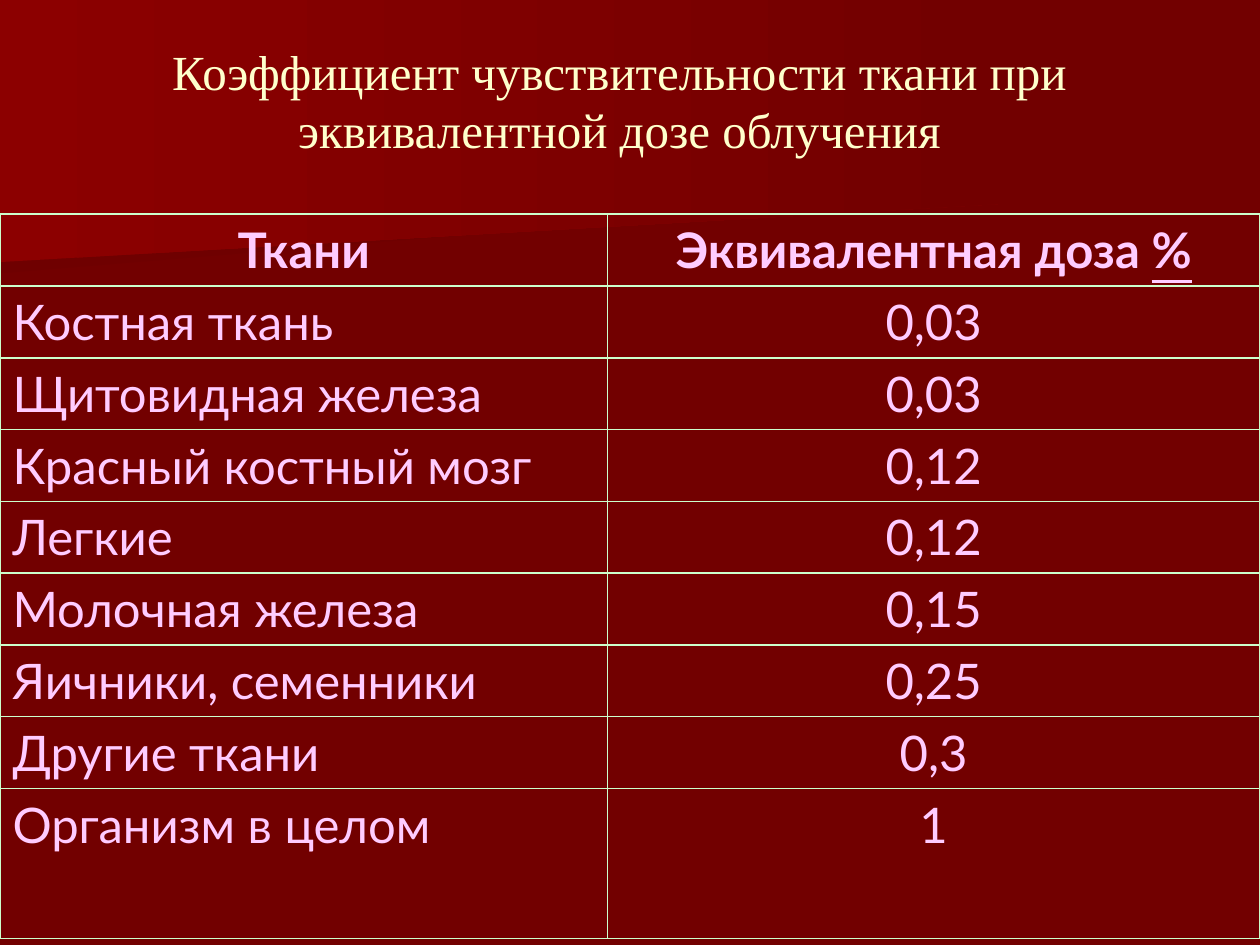
"""Build a slide with a table of tissue sensitivity coefficients."""
import dataclasses

import lxml.etree
import pptx
import pptx.dml.color
import pptx.enum.text
import pptx.oxml.ns
import pptx.util

Inches = pptx.util.Inches
CENTER = pptx.enum.text.PP_ALIGN.CENTER
LEFT = pptx.enum.text.PP_ALIGN.LEFT

COLORS = {
    "background": "720000",
    "shade": "6F0000",
    "glow": "8C0000",
    "title": "FFFFCC",
    "table_text": "FFCCFF",
    "border": "CCFFCC",
}


@dataclasses.dataclass(frozen=True)
class Wedge:
    """A background outline that fades into the slide colour."""

    points: tuple[tuple[float, float], ...]
    color: str


@dataclasses.dataclass(frozen=True)
class TissueRow:
    """One table row with its tissue and dose."""

    tissue: str
    dose: str
    height: float = 0.57


WEDGES = (
    Wedge(((7.78, 1.53), (0, 2.17), (0, 1.01), (7.79, 1.01), (7.78, 1.28)), "shade"),
    Wedge(((7.92, 1.62), (0, 2.08), (0, 0), (7.92, 0)), "glow"),
)
ROWS = (
    TissueRow("Ткани", "Эквивалентная доза "),
    TissueRow("Костная ткань", "0,03"),
    TissueRow("Щитовидная железа", "0,03"),
    TissueRow("Красный костный мозг", "0,12"),
    TissueRow("Легкие", "0,12"),
    TissueRow("Молочная железа", "0,15"),
    TissueRow("Яичники, семенники", "0,25"),
    TissueRow("Другие ткани", "0,3"),
    TissueRow("Организм в целом", "1", 1.19),
)
COLUMN_WIDTHS = (4.82, 5.18)
TITLE = "Коэффициент чувствительности ткани при эквивалентной дозе облучения"


def rgb(name: str) -> pptx.dml.color.RGBColor:
    """Return a named colour."""
    return pptx.dml.color.RGBColor.from_string(COLORS[name])


def add_run(paragraph, text: str, color: str, **formats) -> None:
    """Add a run with the given font attributes."""
    run = paragraph.add_run()
    run.text = text
    run.font.color.rgb = rgb(color)
    for attribute, value in {"size": pptx.util.Pt(28), **formats}.items():
        setattr(run.font, attribute, value)


def draw_wedge(slide, wedge: Wedge) -> None:
    """Draw a gradient background outline."""
    start, *others = [(Inches(x), Inches(y)) for x, y in wedge.points]
    builder = slide.shapes.build_freeform(*start)
    builder.add_line_segments(others)
    shape = builder.convert_to_shape()
    shape.shadow.inherit = False
    shape.line.fill.background()
    shape.fill.gradient()
    shape.fill.gradient_angle = 0
    for stop, color in zip(shape.fill.gradient_stops, (wedge.color, "background")):
        stop.color.rgb = rgb(color)


def set_borders(cell) -> None:
    """Give all four sides of a cell a thin line."""
    qn = pptx.oxml.ns.qn
    properties = cell._tc.get_or_add_tcPr()
    for index, side in enumerate(("lnL", "lnR", "lnT", "lnB")):
        line = lxml.etree.Element(qn(f"a:{side}"), w=str(pptx.util.Pt(1)))
        fill = lxml.etree.SubElement(line, qn("a:solidFill"))
        lxml.etree.SubElement(fill, qn("a:srgbClr"), val=COLORS["border"])
        properties.insert(index, line)


def draw_table(slide) -> None:
    """Draw the table of tissues and doses."""
    height = sum(row.height for row in ROWS)
    table = slide.shapes.add_table(
        len(ROWS), len(COLUMN_WIDTHS), 0, Inches(1.7), Inches(10), Inches(height)
    ).table
    table.first_row = table.horz_banding = False
    for column, width in zip(table.columns, COLUMN_WIDTHS):
        column.width = Inches(width)
    for row_index, row in enumerate(ROWS):
        table.rows[row_index].height = Inches(row.height)
        is_header = row_index == 0
        for column_index, text in enumerate((row.tissue, row.dose)):
            cell = table.cell(row_index, column_index)
            cell.fill.background()
            set_borders(cell)
            paragraph = cell.text_frame.paragraphs[0]
            paragraph.alignment = CENTER if is_header or column_index else LEFT
            add_run(paragraph, text, "table_text", name="Lato", bold=is_header)
    header = table.cell(0, 1).text_frame.paragraphs[0]
    add_run(header, "%", "table_text", name="Lato", bold=True, underline=True)


def draw_title(slide) -> None:
    """Draw the centred title."""
    box = slide.shapes.add_textbox(
        Inches(0.27), Inches(0.28), Inches(9.29), Inches(1.03)
    )
    frame = box.text_frame
    frame.word_wrap = True
    frame.vertical_anchor = pptx.enum.text.MSO_ANCHOR.BOTTOM
    paragraph = frame.paragraphs[0]
    paragraph.alignment = CENTER
    add_run(paragraph, TITLE, "title", name="Times New Roman")


def main() -> None:
    """Build and save the presentation."""
    presentation = pptx.Presentation()
    presentation.slide_width = Inches(10)
    presentation.slide_height = Inches(7.5)
    slide = presentation.slides.add_slide(presentation.slide_layouts[6])
    slide.background.fill.solid()
    slide.background.fill.fore_color.rgb = rgb("background")
    for wedge in WEDGES:
        draw_wedge(slide, wedge)
    draw_table(slide)
    draw_title(slide)
    presentation.save("out.pptx")


if __name__ == "__main__":
    main()
